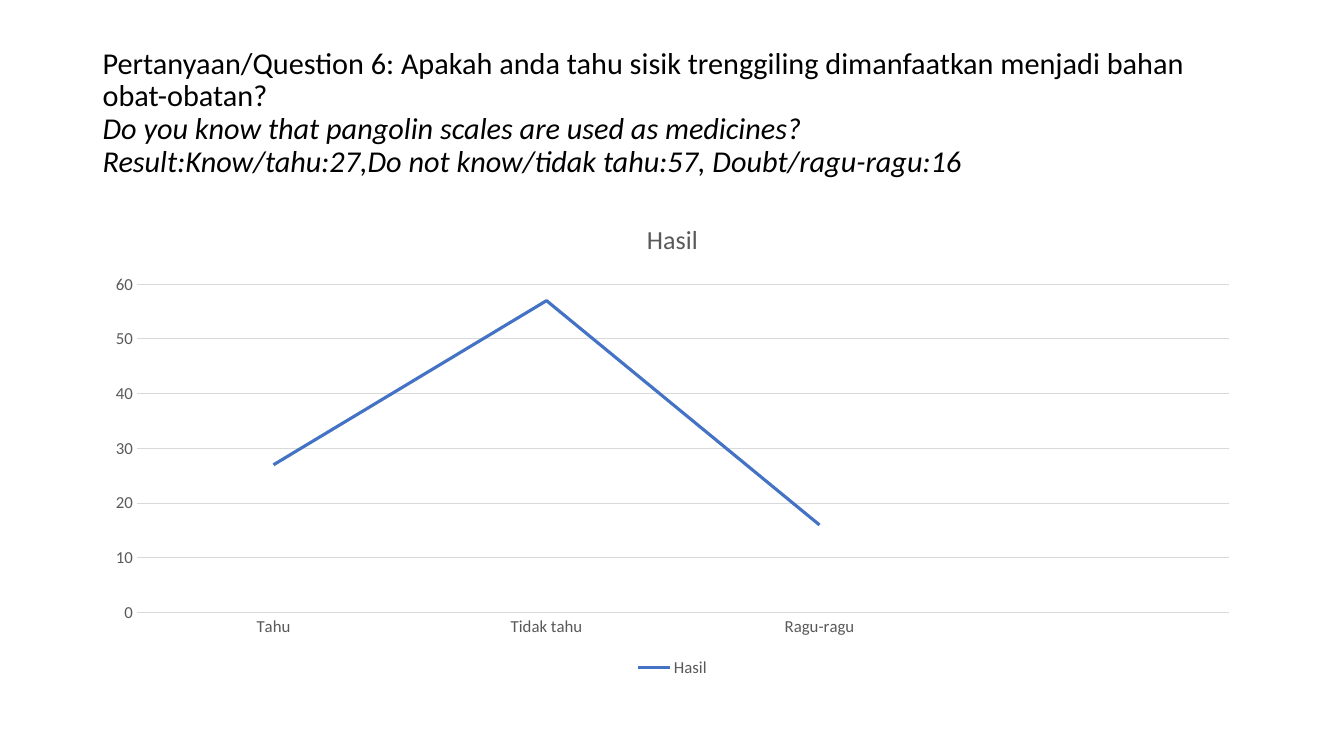
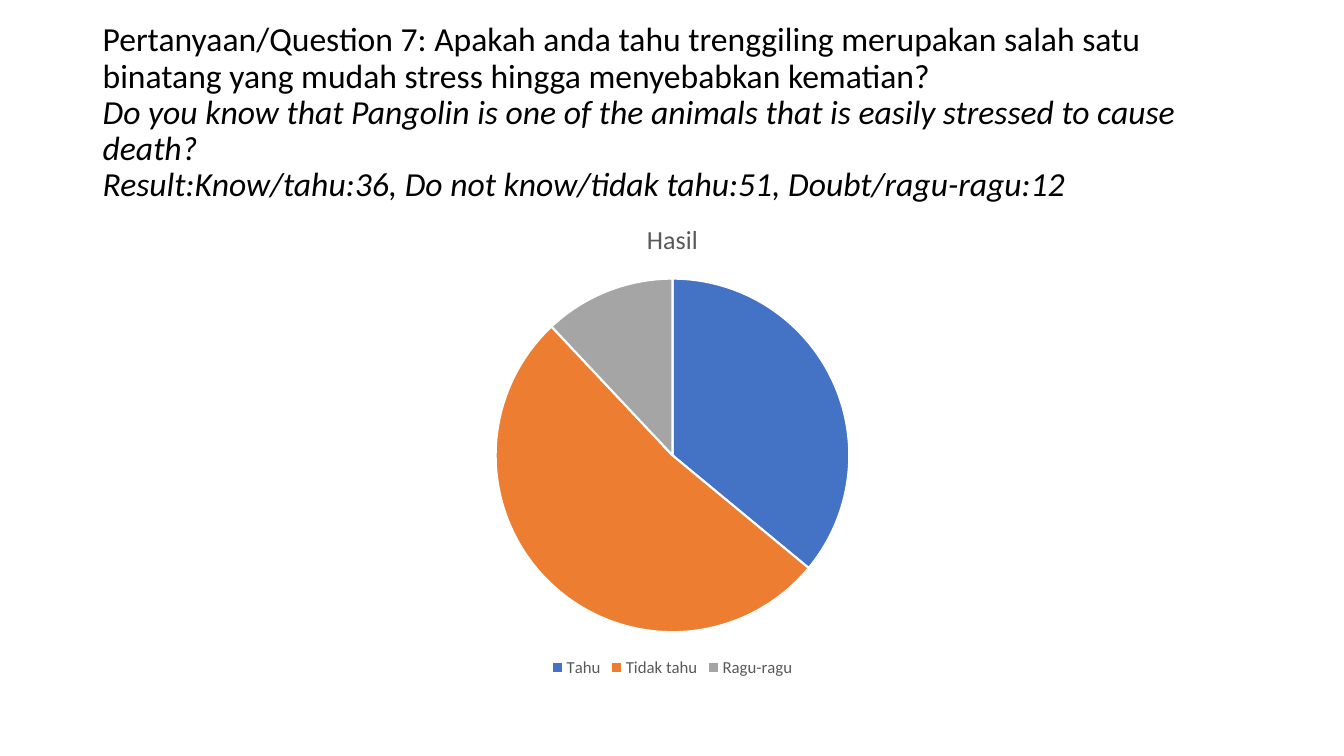
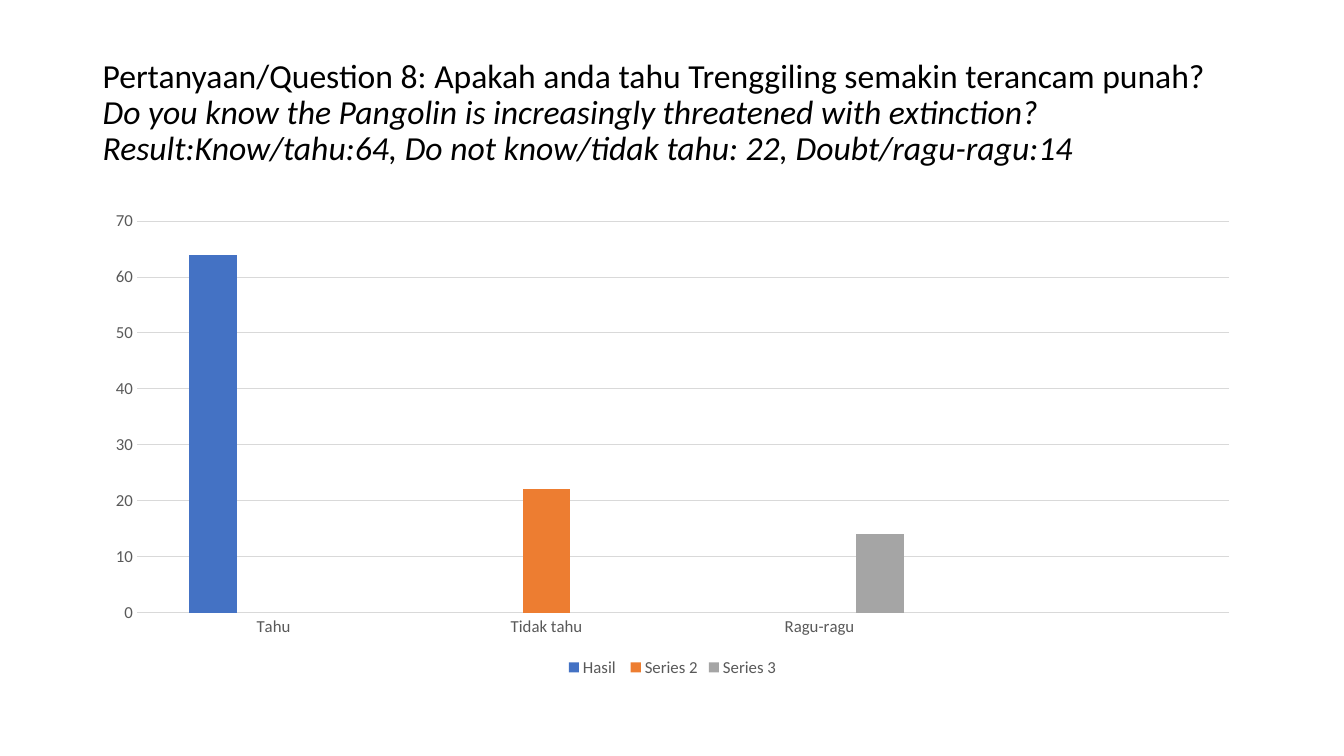
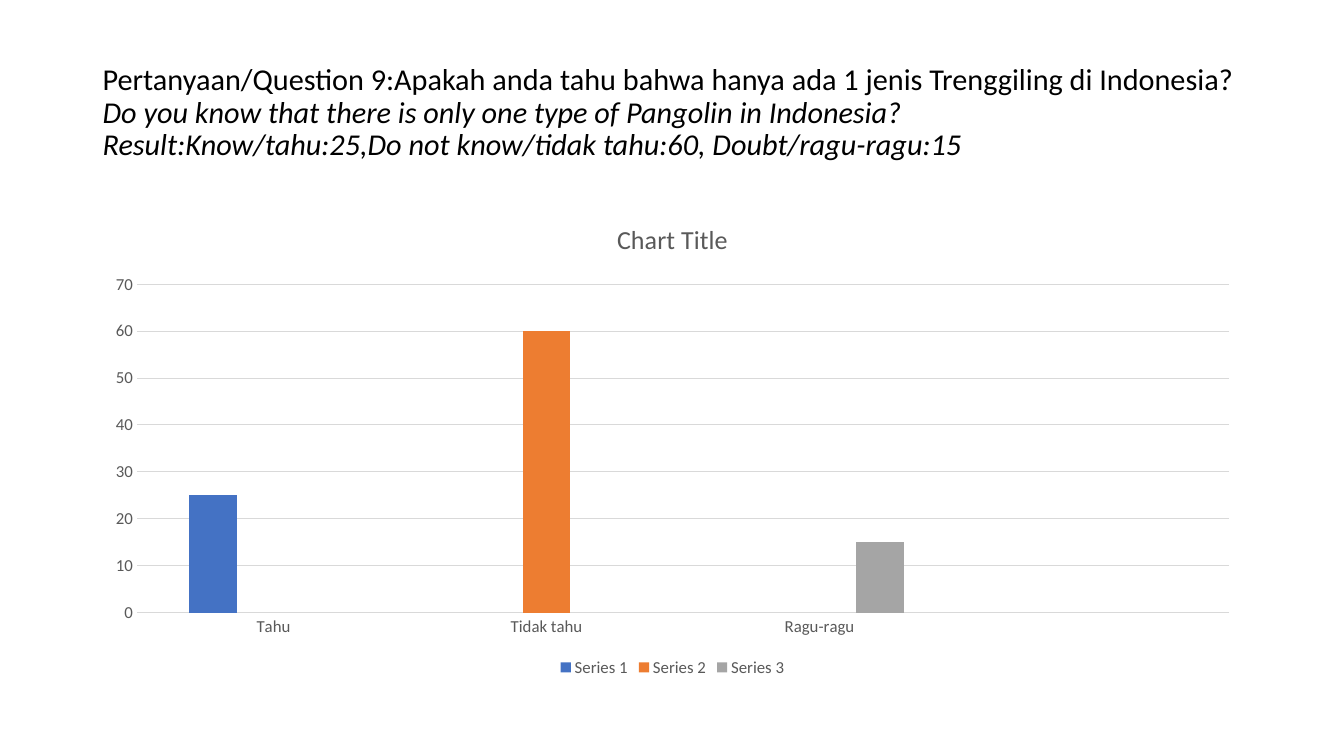
import dataclasses

import pptx
import pptx.chart.data
import pptx.dml.color
import pptx.enum.chart
import pptx.enum.text
import pptx.util

ChartType = pptx.enum.chart.XL_CHART_TYPE


@dataclasses.dataclass(frozen=True)
class Theme:
    font: str = "Calibri"
    ink: str = "000000"
    muted: str = "595959"
    grid: str = "D9D9D9"
    paper: str = "FFFFFF"
    accents: tuple = ("4472C4", "ED7D31", "A5A5A5")
    label_size: float = 12
    chart_title_size: float = 18.6
    hairline: float = 0.75
    slice_border: float = 1.5
    trend_line: float = 2.25


THEME = Theme()
SLIDE_SIZE = (13.33, 7.5)
LEFT, WIDTH = 0.92, 11.5
TITLE_BOX = (LEFT, 0.4, WIDTH, 1.45)
CHART_BOX = (LEFT, 2, WIDTH, 4.76)

ANSWERS = ["Tahu", "Tidak tahu", "Ragu-ragu"]
ANSWERS_AND_SPARE = ANSWERS + [""]

QUESTIONS = [
    {
        "question": "Pertanyaan/Question 6: Apakah anda tahu sisik trenggiling dimanfaatkan menjadi bahan obat-obatan?",
        "translation": "Do you know that pangolin scales are used as medicines?",
        "result": "Result:Know/tahu:27,Do not know/tidak tahu:57, Doubt/ragu-ragu:16",
        "size": 21.6,
        "type": ChartType.LINE,
        "chart_title": "Hasil",
        "categories": ANSWERS_AND_SPARE,
        "series": [("Hasil", [27, 57, 16, None])],
    },
    {
        "question": "Pertanyaan/Question 7: Apakah anda tahu trenggiling merupakan salah satu binatang yang mudah stress hingga menyebabkan kematian?",
        "translation": "Do you know that Pangolin is one of the animals that is easily stressed to cause death?",
        "result": "Result:Know/tahu:36, Do not know/tidak tahu:51, Doubt/ragu-ragu:12",
        "size": 24,
        "type": ChartType.PIE,
        "chart_title": "Hasil",
        "categories": ANSWERS,
        "series": [("Hasil", [36, 52, 12])],
    },
    {
        "question": "Pertanyaan/Question 8: Apakah anda tahu Trenggiling semakin terancam punah?",
        "translation": "Do you know the Pangolin is increasingly threatened with extinction?",
        "result": "Result:Know/tahu:64, Do not know/tidak tahu: 22, Doubt/ragu-ragu:14",
        "size": 24,
        "type": ChartType.COLUMN_CLUSTERED,
        "chart_title": None,
        "categories": ANSWERS_AND_SPARE,
        "series": [
            ("Hasil ", [64, None, None, None]),
            ("Series 2", [None, 22, None, None]),
            ("Series 3", [None, None, 14, None]),
        ],
    },
    {
        "question": "Pertanyaan/Question 9:Apakah anda tahu bahwa hanya ada 1 jenis Trenggiling di Indonesia?",
        "translation": "Do you know that there is only one type of Pangolin in Indonesia?",
        "result": "Result:Know/tahu:25,Do not know/tidak tahu:60, Doubt/ragu-ragu:15",
        "size": 21.6,
        "type": ChartType.COLUMN_CLUSTERED,
        "chart_title": "Chart Title",
        "categories": ANSWERS_AND_SPARE,
        "series": [
            ("Series 1", [25, None, None, None]),
            ("Series 2", [None, 60, None, None]),
            ("Series 3", [None, None, 15, None]),
        ],
    },
]


def inches(box):
    return [pptx.util.Inches(length) for length in box]


def rgb(color):
    return pptx.dml.color.RGBColor.from_string(color)


def style_font(font, size=THEME.label_size, color=THEME.muted, italic=False):
    font.name = THEME.font
    font.size = pptx.util.Pt(size)
    font.bold = False
    font.italic = italic
    font.color.rgb = rgb(color)


def style_line(line, color, width):
    line.color.rgb = rgb(color)
    line.width = pptx.util.Pt(width)


def style_fill(fill, color):
    fill.solid()
    fill.fore_color.rgb = rgb(color)


def add_text(paragraph, text, **font_format):
    run = paragraph.add_run()
    run.text = text
    style_font(run.font, **font_format)


def add_title(slide, item):
    frame = slide.shapes.add_textbox(*inches(TITLE_BOX)).text_frame
    frame.word_wrap = True
    frame.vertical_anchor = pptx.enum.text.MSO_ANCHOR.MIDDLE
    paragraph = frame.paragraphs[0]
    paragraph.line_spacing = 0.9
    look = {"size": item["size"], "color": THEME.ink}
    add_text(paragraph, item["question"], **look)
    for part in ("translation", "result"):
        paragraph.add_line_break()
        add_text(paragraph, item[part], italic=True, **look)


def style_axes(chart):
    for axis in (chart.category_axis, chart.value_axis):
        axis.major_tick_mark = axis.minor_tick_mark = pptx.enum.chart.XL_TICK_MARK.NONE
        style_font(axis.tick_labels.font)
    style_line(chart.category_axis.format.line, THEME.grid, THEME.hairline)
    chart.value_axis.format.line.fill.background()
    chart.value_axis.has_major_gridlines = True
    style_line(chart.value_axis.major_gridlines.format.line, THEME.grid, THEME.hairline)


def style_lines(plot):
    for series, color in zip(plot.series, THEME.accents):
        series.smooth = False
        series.marker.style = pptx.enum.chart.XL_MARKER_STYLE.NONE
        style_line(series.format.line, color, THEME.trend_line)


def style_slices(plot):
    for index, color in enumerate(THEME.accents):
        point_format = plot.series[0].points[index].format
        style_fill(point_format.fill, color)
        style_line(point_format.line, THEME.paper, THEME.slice_border)


def style_columns(plot):
    plot.gap_width, plot.overlap = 219, -27
    for series, color in zip(plot.series, THEME.accents):
        style_fill(series.format.fill, color)


PLOT_STYLES = {
    ChartType.LINE: style_lines,
    ChartType.PIE: style_slices,
    ChartType.COLUMN_CLUSTERED: style_columns,
}


def add_result_chart(slide, item):
    data = pptx.chart.data.CategoryChartData()
    data.categories = item["categories"]
    for name, values in item["series"]:
        data.add_series(name, values)
    chart = slide.shapes.add_chart(item["type"], *inches(CHART_BOX), data).chart
    style_font(chart.font, size=10, color=THEME.ink)

    chart.has_title = item["chart_title"] is not None
    if chart.has_title:
        paragraph = chart.chart_title.text_frame.paragraphs[0]
        add_text(paragraph, item["chart_title"], size=THEME.chart_title_size)
        chart.chart_title.include_in_layout = False

    chart.has_legend = True
    chart.legend.position = pptx.enum.chart.XL_LEGEND_POSITION.BOTTOM
    chart.legend.include_in_layout = False
    style_font(chart.legend.font)

    plot = chart.plots[0]
    is_pie = item["type"] == ChartType.PIE
    plot.vary_by_categories = is_pie
    if not is_pie:
        style_axes(chart)
    PLOT_STYLES[item["type"]](plot)


def main():
    presentation = pptx.Presentation()
    presentation.slide_width, presentation.slide_height = inches(SLIDE_SIZE)
    blank = presentation.slide_layouts[6]
    for item in QUESTIONS:
        slide = presentation.slides.add_slide(blank)
        add_title(slide, item)
        add_result_chart(slide, item)
    presentation.save("out.pptx")


if __name__ == "__main__":
    main()
